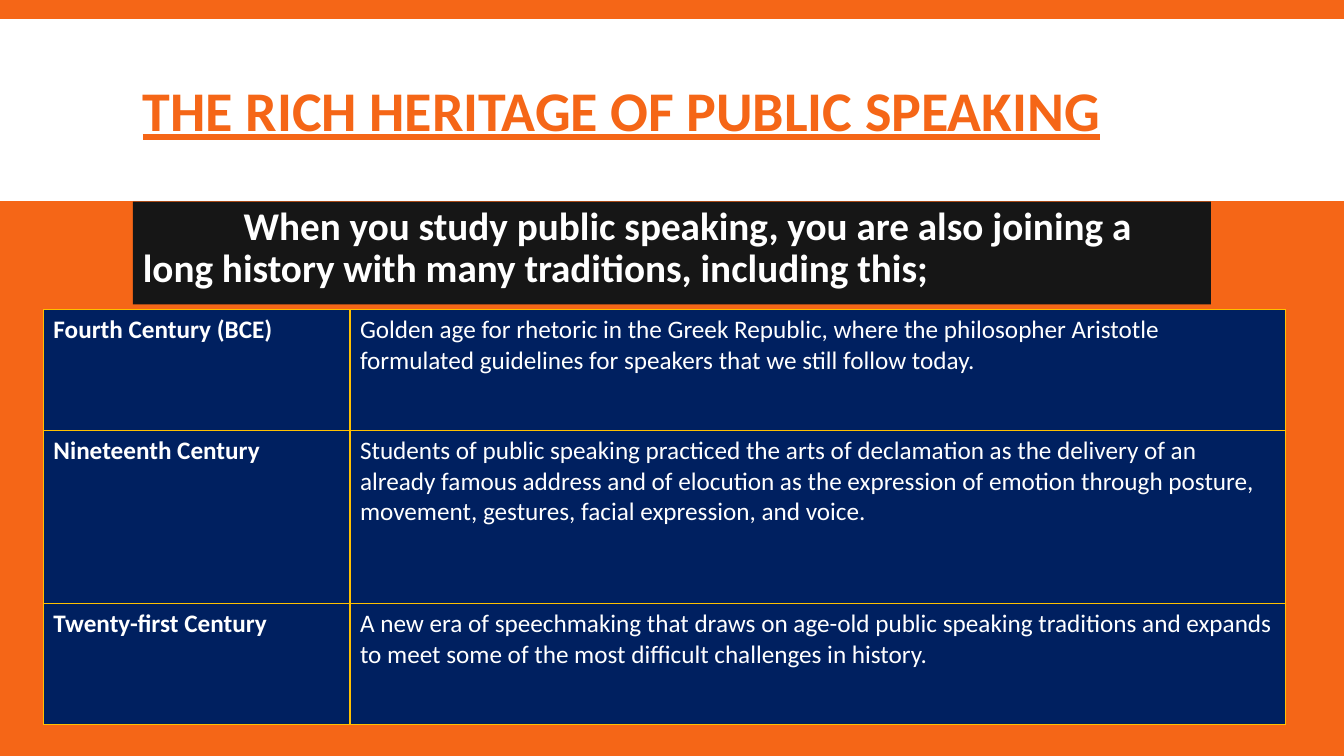
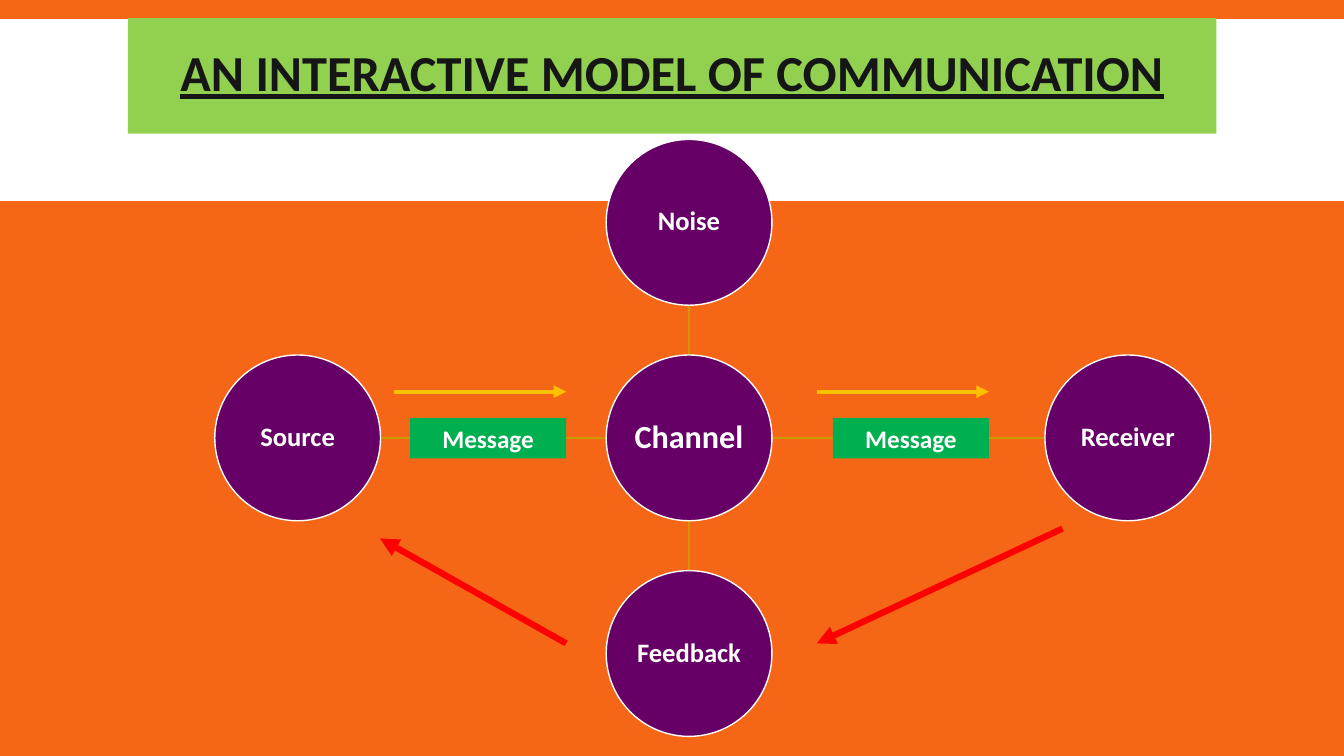
import pptx
import pptx.dml.color
import pptx.enum.shapes
import pptx.enum.text
import pptx.oxml.ns
import pptx.util
from lxml import etree

Pt = pptx.util.Pt
SHAPES = pptx.enum.shapes.MSO_SHAPE
ALIGN = pptx.enum.text.PP_ALIGN
ANCHOR = pptx.enum.text.MSO_ANCHOR
qn = pptx.oxml.ns.qn

FONT = "Calibri"
ORANGE = "F56617"
WHITE = "FFFFFF"
BLACK = "161616"
NAVY = "002060"
GOLD = "FFC000"
SPOKE = "CC9A00"
PURPLE = "660066"
GREEN = "00B050"
LIME = "92D050"
RED = "FF0000"

HERITAGE = [
    ("Fourth Century (BCE)",
     "Golden age for rhetoric in the Greek Republic, where the philosopher Aristotle "
     "formulated guidelines for speakers that we still follow today."),
    ("Nineteenth Century",
     "Students of public speaking practiced the arts of declamation as the delivery of an "
     "already famous address and of elocution as the expression of emotion through posture, "
     "movement, gestures, facial expression, and voice."),
    ("Twenty-first Century",
     "A new era of speechmaking that draws on age-old public speaking traditions and expands "
     "to meet some of the most difficult challenges in history."),
]


def paint(target, colour):
    target.solid()
    target.fore_color.rgb = pptx.dml.color.RGBColor.from_string(colour)


def write(frame, text, size, colour=WHITE, bold=True, underline=False,
          align=ALIGN.LEFT, spacing=None):
    frame.text = text
    frame.word_wrap = True
    para = frame.paragraphs[0]
    para.alignment = align
    para.line_spacing = spacing
    font = para.runs[0].font
    font.name, font.size, font.bold, font.underline = FONT, Pt(size), bold, underline
    paint(font.fill, colour)
    return para


def add_block(page, box, fill=None, kind=SHAPES.RECTANGLE, outline=None):
    shape = page.shapes.add_shape(kind, *map(Pt, box))
    shape.shadow.inherit = False
    if fill:
        paint(shape.fill, fill)
    else:
        shape.fill.background()
    if outline:
        paint(shape.line.fill, outline)
        shape.line.width = Pt(1)
    else:
        shape.line.fill.background()
    return shape


def add_line(page, start, end, colour, width, arrow=False):
    line = page.shapes.add_connector(
        pptx.enum.shapes.MSO_CONNECTOR.STRAIGHT, *map(Pt, (*start, *end)))
    paint(line.line.fill, colour)
    line.line.width = Pt(width)
    if arrow:
        etree.SubElement(line.line._get_or_add_ln(), qn("a:tailEnd"), type="triangle")
    etree.SubElement(line._element.spPr, qn("a:effectLst"))


def add_page(deck):
    page = deck.slides.add_slide(deck.slide_layouts[6])
    paint(page.background.fill, ORANGE)
    add_block(page, (0, 13.7, 960, 129.8), WHITE)
    return page


def add_title(page, box, text, size, colour, fill=None, align=ALIGN.LEFT):
    title = add_block(page, box, fill)
    title.text_frame.vertical_anchor = ANCHOR.MIDDLE
    write(title.text_frame, text, size, colour, underline=True, align=align, spacing=0.85)


def add_intro(page, box, text):
    intro = add_block(page, box, BLACK)
    intro.text_frame.vertical_anchor = ANCHOR.TOP
    para = write(intro.text_frame, text, 28, spacing=0.9)
    para._p.get_or_add_pPr().set("indent", str(Pt(72)))


def border_cell(cell, colour):
    properties = cell._tc.get_or_add_tcPr()
    for place, side in enumerate(("a:lnL", "a:lnR", "a:lnT", "a:lnB")):
        line = etree.Element(qn(side), w=str(Pt(1)))
        fill = etree.SubElement(line, qn("a:solidFill"))
        etree.SubElement(fill, qn("a:srgbClr"), val=colour)
        properties.insert(place, line)


def add_timeline(page, box, rows):
    left, top, width, height = box
    table = page.shapes.add_table(len(rows), 2, *map(Pt, box)).table
    label_width, short_row = 219, 86.4
    table.columns[0].width = Pt(label_width)
    table.columns[1].width = Pt(width - label_width)
    heights = (short_row, height - 2 * short_row, short_row)
    for row, row_height, texts in zip(table.rows, heights, rows):
        row.height = Pt(row_height)
        for column, (cell, text) in enumerate(zip(row.cells, texts)):
            paint(cell.fill, NAVY)
            border_cell(cell, GOLD)
            write(cell.text_frame, text, 18, bold=column == 0)


def add_node(page, centre, radius, text, size):
    x, y = centre
    node = add_block(page, (x - radius, y - radius, 2 * radius, 2 * radius),
                     PURPLE, SHAPES.OVAL, WHITE)
    frame = node.text_frame
    frame.margin_left = frame.margin_right = frame.margin_top = frame.margin_bottom = Pt(1)
    frame.vertical_anchor = ANCHOR.MIDDLE
    write(frame, text, size, align=ALIGN.CENTER, spacing=0.9)


def add_message(page, right, top):
    add_line(page, (right - 123, top), (right, top), GOLD, 3, arrow=True)
    label = add_block(page, (right - 111.5, top + 18.6, 111.5, 29), GREEN)
    label.text_frame.vertical_anchor = ANCHOR.MIDDLE
    write(label.text_frame, "Message", 18, align=ALIGN.CENTER)


def add_model(page, box):
    left, top, width, height = box
    radius = 59.2
    x, y = left + 338.8, top + height / 2
    outer = {
        "Noise": (x, top + radius),
        "Receiver": (left + width - radius, y),
        "Feedback": (x, top + height - radius),
        "Source": (left + radius, y),
    }
    for centre in outer.values():
        add_line(page, (x, y), centre, SPOKE, 1)
    add_node(page, (x, y), radius, "Channel", 23)
    for text, centre in outer.items():
        add_node(page, centre, radius, text, 19)
    for right in (left + 251, left + 553):
        add_message(page, right, y - 33)
    for start, end in (((605.5, 278), (430, 360)), ((251, 360), (118, 285))):
        add_line(page, (left + start[0], top + start[1]),
                 (left + end[0], top + end[1]), RED, 4.5, arrow=True)


def build_heritage(deck):
    page = add_page(deck)
    add_title(page, (95, 22.3, 770, 118.8), "THE RICH HERITAGE OF PUBLIC SPEAKING", 40, ORANGE)
    add_intro(page, (95, 144, 770, 73.5),
              "When you study public speaking, you are also joining a long history "
              "with many traditions, including this;")
    add_timeline(page, (31, 221, 887, 296.6), HERITAGE)


def build_communication(deck):
    page = add_page(deck)
    add_title(page, (91.4, 13, 777.6, 82.5), "AN INTERACTIVE MODEL OF COMMUNICATION",
              36, BLACK, LIME, ALIGN.CENTER)
    add_model(page, (153.4, 99.6, 711.4, 426.4))


def main():
    deck = pptx.Presentation()
    deck.slide_width, deck.slide_height = Pt(960), Pt(540)
    build_heritage(deck)
    build_communication(deck)
    deck.save("out.pptx")


if __name__ == "__main__":
    main()
